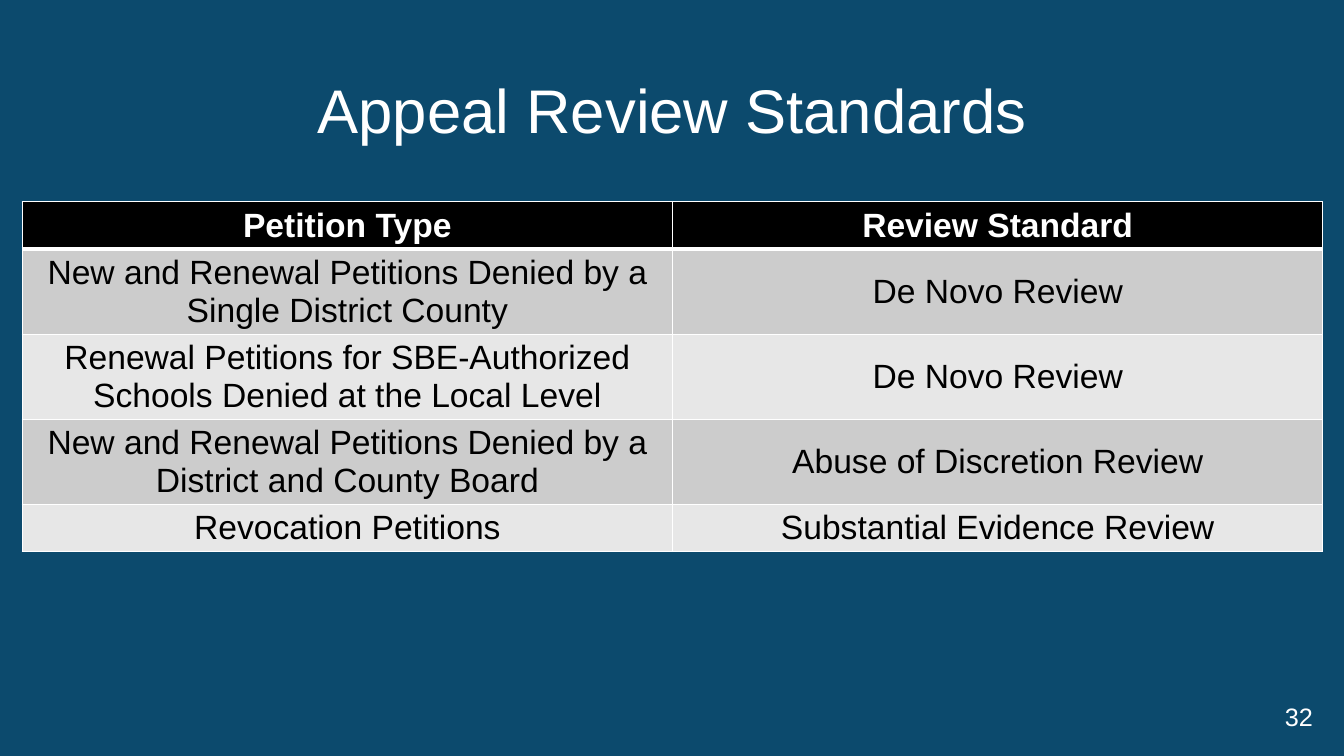
from lxml.etree import SubElement
from pptx import Presentation
from pptx.dml.color import RGBColor
from pptx.enum.text import MSO_ANCHOR as Anchor, PP_ALIGN as Align
from pptx.oxml.ns import qn
from pptx.util import Inches, Pt

COLORS = {
    "background": "0C4A6D",
    "white": "FFFFFF",
    "black": "000000",
    "odd_row": "CCCCCC",
    "even_row": "E7E7E7",
}
STANDARDS = [
    ("Petition Type", "Review Standard"),
    ("New and Renewal Petitions Denied by a Single District County", "De Novo Review"),
    ("Renewal Petitions for SBE-Authorized Schools Denied at the Local Level", "De Novo Review"),
    ("New and Renewal Petitions Denied by a District and County Board", "Abuse of Discretion Review"),
    ("Revocation Petitions", "Substantial Evidence Review"),
]


def write(frame, text, size, color, align, bold=False):
    frame.word_wrap = True
    frame.vertical_anchor = Anchor.MIDDLE
    paragraph = frame.paragraphs[0]
    paragraph.alignment = align
    run = paragraph.add_run()
    run.text = text
    run.font.name = "Arial"
    run.font.size = Pt(size)
    run.font.bold = bold
    run.font.color.rgb = RGBColor.from_string(COLORS[color])
    return paragraph


def add_border(cell, side, points):
    line = SubElement(cell._tc.get_or_add_tcPr(), qn(f"a:ln{side}"), w=str(Pt(points)))
    fill = SubElement(line, qn("a:solidFill"))
    SubElement(fill, qn("a:srgbClr"), val=COLORS["white"])


prs = Presentation()
prs.slide_width = Inches(13.33)
prs.slide_height = Inches(7.5)
slide = prs.slides.add_slide(prs.slide_layouts[5])
slide.background.fill.solid()
slide.background.fill.fore_color.rgb = RGBColor.from_string(COLORS["background"])

title = slide.shapes.title
title.left, title.top = Inches(0.22), Inches(0.4)
title.width, title.height = Inches(12.9), Inches(1.45)
heading = write(title.text_frame, "Appeal Review Standards", 44, "white", Align.CENTER)
heading.line_spacing = 0.9

standards = slide.shapes.add_table(
    len(STANDARDS), 2, Inches(0.22), Inches(2), Inches(12.9), Inches(0.41 * len(STANDARDS))
).table
for row, texts in enumerate(STANDARDS):
    header = row == 0
    row_fill = "black" if header else "odd_row" if row % 2 else "even_row"
    borders = {"L": 1, "R": 1, "T": 3 if row == 1 else 1, "B": 3 if header else 1}
    for column, text in enumerate(texts):
        cell = standards.cell(row, column)
        cell.margin_left = cell.margin_right = Inches(0.05)
        cell.margin_top = cell.margin_bottom = Inches(0.05)
        cell.vertical_anchor = Anchor.MIDDLE
        for side, points in borders.items():
            add_border(cell, side, points)
        cell.fill.solid()
        cell.fill.fore_color.rgb = RGBColor.from_string(COLORS[row_fill])
        write(cell.text_frame, text, 24, "white" if header else "black", Align.CENTER, header)

page_number = slide.shapes.add_textbox(Inches(12.56), Inches(6.91), Inches(0.56), Inches(0.4))
write(page_number.text_frame, "32", 18, "white", Align.RIGHT)

prs.save("out.pptx")
